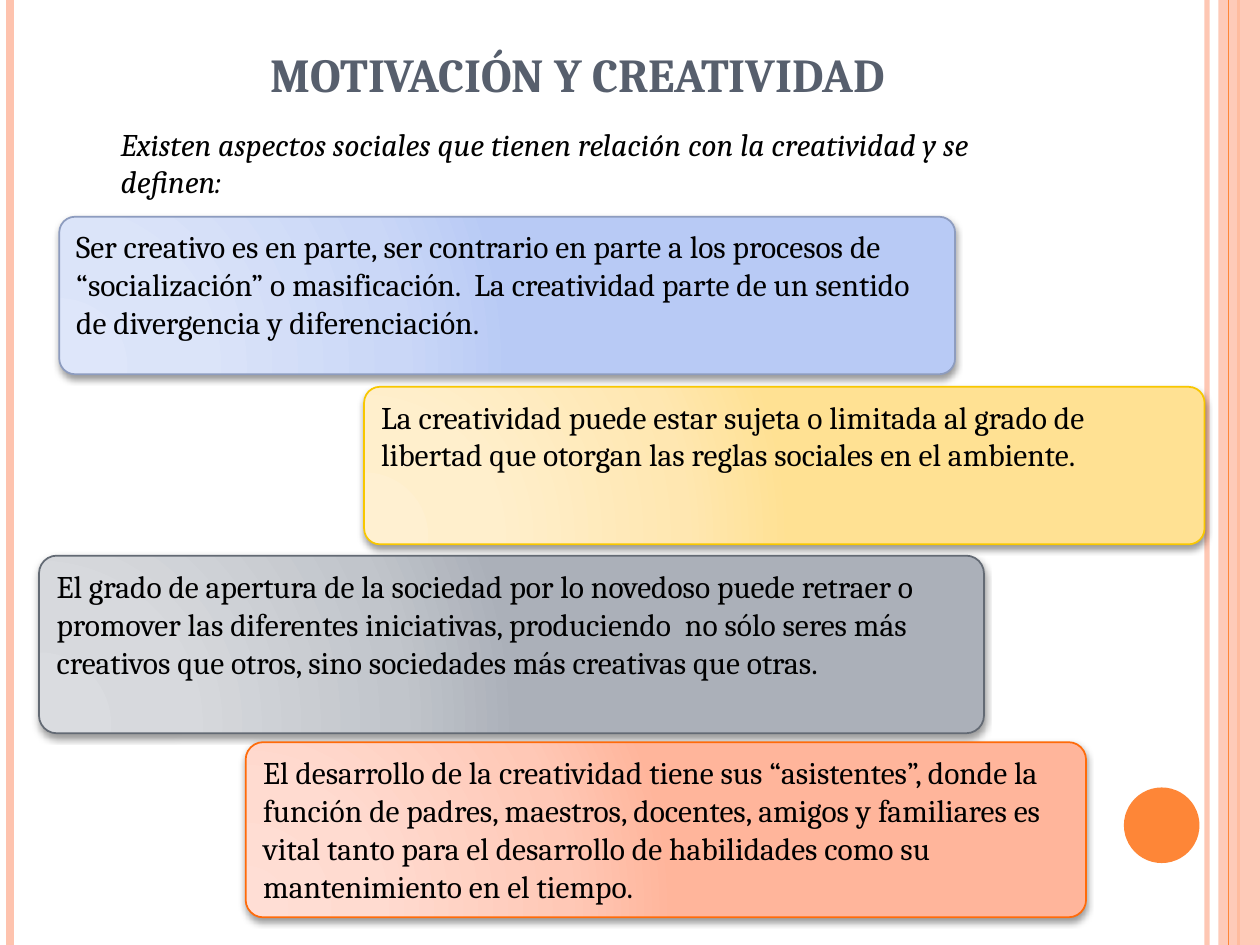
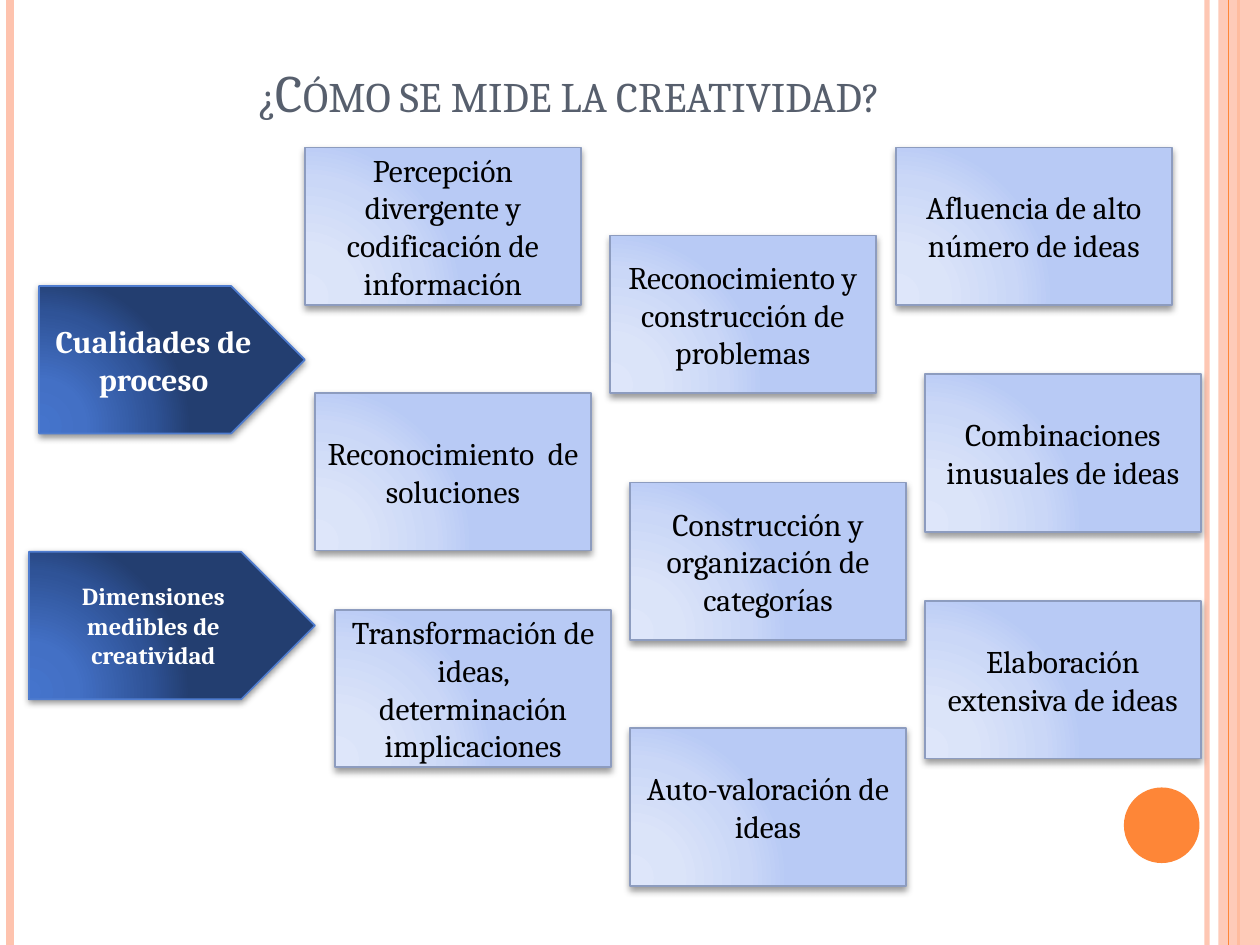
from lxml.etree import SubElement
from pptx import Presentation
from pptx.dml.color import RGBColor
from pptx.enum.shapes import MSO_CONNECTOR, MSO_SHAPE as Preset
from pptx.enum.text import MSO_ANCHOR as Anchor, MSO_AUTO_SIZE as AutoSize, PP_ALIGN as Align
from pptx.oxml import parse_xml
from pptx.oxml.ns import nsdecls, qn
from pptx.util import Inches, Pt

WIDTH, HEIGHT = 10, 7.5
FONT = "Cambria"
COLORS = {"peach": "FEC3AE", "orange": "FE8637", "title": "575F6D",
          "black": "000000", "white": "FFFFFF"}

# Each style: gradient colours from the lower left outwards, then the outline.
GRADIENT_STOPS = (0, 30, 75, 100)
STYLES = {
    "blue": (("DEE6FA", "DBE4F9", "CAD7F7", "B8CAF5"), "8D9CBF"),
    "yellow": (("FFF0D1", "FFEFCC", "FFE7B1", "FFE193"), "F8C700"),
    "gray": (("DADCE0", "D7D9DD", "C1C5CB", "ABB0B9"), "636A74"),
    "salmon": (("FFDED5", "FFDBD0", "FFC8B6", "FFB59B"), "FF6B0A"),
    "navy": (("4574CC", "4370C5", "2F5397", "233E70"), "4F7CCF"),
}

# Vertical stripes: x, colour, width in points, opacity in percent.
STRIPES = [(9.58, "peach", 3, 93), (0.08, "peach", 4.5, 100), (9.83, "orange", 1.5, 100)]
INNER_STRIPE = (9.75, "orange", 0.75, 100)
BAND_LEFT, BAND_OPACITY = 9.67, 87
DISC = (8.92, 6.25, 0.6, 0.6)

MOTIVATION_TITLE = "MOTIVACIÓN Y CREATIVIDAD"
INTRO = "Existen aspectos sociales que tienen relación con la creatividad y se definen:"
SOCIAL_ASPECTS = [
    ("blue", (0.47, 1.72, 7.11, 1.25),
     "Ser creativo es en parte, ser contrario en parte a los procesos de “socialización” o "
     "masificación.  La creatividad parte de un sentido de divergencia y diferenciación."),
    ("yellow", (2.89, 3.07, 6.67, 1.25),
     "La creatividad puede estar sujeta o limitada al grado de libertad que otorgan las "
     "reglas sociales en el ambiente."),
    ("gray", (0.31, 4.41, 7.5, 1.41),
     "El grado de apertura de la sociedad por lo novedoso puede retraer o  promover las "
     "diferentes iniciativas, produciendo  no sólo seres más creativos que otros, sino "
     "sociedades más creativas que otras."),
    ("salmon", (1.95, 5.89, 6.67, 1.39),
     "El desarrollo de la creatividad tiene sus “asistentes”, donde la función de padres, "
     "maestros, docentes, amigos y familiares es vital tanto para el desarrollo de "
     "habilidades como su mantenimiento en el tiempo."),
]

MEASURE_TITLE = "¿Cómo se mide la creatividad?"
ARROW_HEIGHT = 1.17
ARROWS = [  # left, top, width, text size, text
    (0.31, 2.27, 2.11, 18, "Cualidades de proceso"),
    (0.23, 4.38, 2.27, 14, "Dimensiones medibles de creatividad"),
]
QUALITY_WIDTH, QUALITY_HEIGHT = 2.19, 1.25
NARROW_WIDTH = 2.11
QUALITIES = [  # left, top, width, text
    (2.42, 1.17, QUALITY_WIDTH, "Percepción divergente y codificación de información"),
    (2.5, 3.12, QUALITY_WIDTH, "Reconocimiento  de soluciones"),
    (2.66, 4.84, QUALITY_WIDTH, "Transformación de ideas, determinación implicaciones"),
    (4.84, 1.87, NARROW_WIDTH, "Reconocimiento y construcción de problemas"),
    (5, 3.83, QUALITY_WIDTH, "Construcción y organización de categorías"),
    (5, 5.78, QUALITY_WIDTH, "Auto-valoración de ideas"),
    (7.11, 1.17, QUALITY_WIDTH, "Afluencia de alto número de ideas"),
    (7.34, 2.97, QUALITY_WIDTH, "Combinaciones inusuales de ideas"),
    (7.34, 4.77, QUALITY_WIDTH, "Elaboración extensiva de ideas"),
]


def rgb(name):
    return RGBColor.from_string(COLORS.get(name, name))


def inches(box):
    return [Inches(length) for length in box]


def set_opacity(parent, percent):
    for color in parent.iter(qn("a:srgbClr")):
        SubElement(color, qn("a:alpha"), val=str(percent * 1000))


def write(shape, text, size=18, color="black", align=Align.LEFT, anchor=Anchor.TOP,
          bold=False, italic=False):
    frame = shape.text_frame
    frame.text = text
    frame.word_wrap = True
    frame.auto_size = AutoSize.NONE
    frame.vertical_anchor = anchor
    paragraph = frame.paragraphs[0]
    paragraph.alignment = align
    font = paragraph.runs[0].font
    font.name, font.size, font.bold, font.italic = FONT, Pt(size), bold, italic
    font.color.rgb = rgb(color)
    return font


def add_stripe(slide, x, color, width, opacity):
    stripe = slide.shapes.add_connector(MSO_CONNECTOR.STRAIGHT, *inches((x, 0, x, HEIGHT)))
    stripe.line.color.rgb = rgb(color)
    stripe.line.width = Pt(width)
    properties = stripe._element.spPr
    if opacity < 100:
        set_opacity(properties, opacity)
    SubElement(properties, qn("a:effectLst"))
    return stripe


def add_plain(slide, preset, box, color):
    shape = slide.shapes.add_shape(preset, *inches(box))
    shape.shadow.inherit = False
    shape.fill.solid()
    shape.fill.fore_color.rgb = rgb(color)
    shape.line.fill.background()
    return shape


def decorate_master(prs, slide):
    """Draw the shared stripes, band and disc, then move them to the master."""
    parts = [add_stripe(slide, *stripe) for stripe in STRIPES]
    band = add_plain(slide, Preset.RECTANGLE,
                     (BAND_LEFT, 0, WIDTH - BAND_LEFT, HEIGHT), "peach")
    set_opacity(band._element.spPr, BAND_OPACITY)
    parts += [band, add_stripe(slide, *INNER_STRIPE),
              add_plain(slide, Preset.OVAL, DISC, "orange")]
    tree = prs.slide_master.shapes._spTree
    for part in parts:
        tree.append(part._element)


def add_card(slide, preset, box, style, shadow_opacity=40, shadow_distance=2):
    """Add a shape with a radial gradient, thin outline and soft shadow."""
    colors, outline = STYLES[style]
    card = slide.shapes.add_shape(preset, *inches(box))
    card.line.color.rgb = rgb(outline)
    card.line.width = Pt(1)
    card.shadow.inherit = False
    stops = "".join(f'<a:gs pos="{position * 1000}"><a:srgbClr val="{color}"/></a:gs>'
                    for position, color in zip(GRADIENT_STOPS, colors))
    gradient = parse_xml(
        f'<a:gradFill {nsdecls("a")} rotWithShape="1"><a:gsLst>{stops}</a:gsLst>'
        '<a:path path="circle"><a:fillToRect l="5000" t="100000" r="120000" b="10000"/>'
        '</a:path></a:gradFill>')
    properties = card._element.spPr
    properties.find(qn("a:prstGeom")).addnext(gradient)
    shadow = SubElement(properties.find(qn("a:effectLst")), qn("a:outerShdw"),
                        blurRad=str(Pt(4)), dist=str(Pt(shadow_distance)),
                        dir="5400000", rotWithShape="0")
    SubElement(shadow, qn("a:srgbClr"), val=COLORS["black"])
    set_opacity(shadow, shadow_opacity)
    return card


def add_title(slide, text, box, size, bold=False):
    title = slide.shapes.title
    title.left, title.top, title.width, title.height = inches(box)
    return write(title, text, size, "title", Align.CENTER, Anchor.BOTTOM, bold)


def build_motivation(slide):
    add_title(slide, MOTIVATION_TITLE, (0.5, 0.3, 8.17, 0.56), 27, bold=True)
    intro = slide.shapes.add_textbox(*inches((0.86, 0.94, 7.73, 0.71)))
    write(intro, INTRO, italic=True)
    for style, box, text in SOCIAL_ASPECTS:
        card = add_card(slide, Preset.ROUNDED_RECTANGLE, box, style)
        card.adjustments[0] = 0.1
        write(card, text)


def build_measure(slide):
    font = add_title(slide, MEASURE_TITLE, (0.31, 0.31, 8.41, 0.72), 30)
    font._element.set("cap", "small")
    for left, top, width, size, text in ARROWS:
        arrow = add_card(slide, Preset.PENTAGON, (left, top, width, ARROW_HEIGHT),
                         "navy", 42, 1.6)
        write(arrow, text, size, "white", Align.CENTER, Anchor.MIDDLE, bold=True)
    for left, top, width, text in QUALITIES:
        quality = add_card(slide, Preset.FLOWCHART_PROCESS,
                           (left, top, width, QUALITY_HEIGHT), "blue")
        write(quality, text, align=Align.CENTER, anchor=Anchor.MIDDLE)


def main():
    prs = Presentation()
    prs.slide_width, prs.slide_height = inches((WIDTH, HEIGHT))
    title_only = prs.slide_layouts[5]
    motivation, measure = (prs.slides.add_slide(title_only) for _ in range(2))
    decorate_master(prs, motivation)
    build_motivation(motivation)
    build_measure(measure)
    prs.save("out.pptx")


if __name__ == "__main__":
    main()
